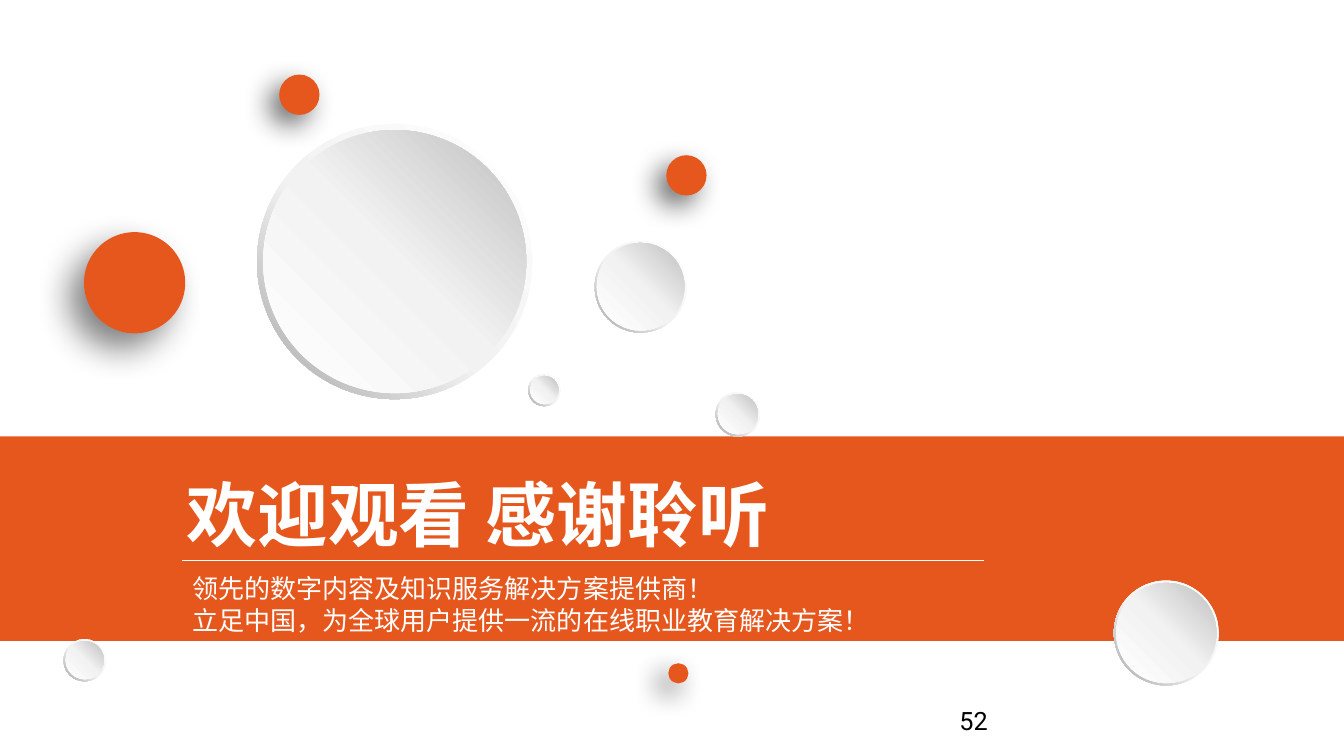
from copy import deepcopy
from dataclasses import dataclass

from lxml.etree import SubElement as Sub
from pptx import Presentation
from pptx.dml.color import RGBColor as RGB
from pptx.enum.shapes import MSO_CONNECTOR as Conn, MSO_SHAPE as Kind
from pptx.enum.text import MSO_ANCHOR as Anchor, MSO_AUTO_SIZE as Fit, PP_ALIGN as Align
from pptx.oxml.ns import qn
from pptx.util import Inches, Pt

ORANGE = RGB(0xE6, 0x57, 0x1E)
WHITE = RGB(0xFF, 0xFF, 0xFF)
BLACK = RGB(0, 0, 0)
PALE = RGB(0xF2, 0xF2, 0xF2)
SILVER = RGB(0xBF, 0xBF, 0xBF)
GREY = RGB(0xA6, 0xA6, 0xA6)
HAN = "Noto Sans CJK SC"
LATIN = "Roboto"

# The slide is a grid of square cells, ten to the inch
COLS, ROWS = 133.33, 75


def cell(n: float) -> int:
    return Inches(n / 10)


@dataclass
class Area:
    col: float
    row: float
    wide: float
    high: float

    def box(self) -> list[int]:
        return [cell(n) for n in (self.col, self.row, self.wide, self.high)]


@dataclass
class Dot:
    col: float
    row: float
    size: float
    alpha: int = 60
    blur: int = 20
    dist: int = 10
    edge: bool = False


@dataclass
class Disc:
    col: float
    row: float
    size: float


@dataclass
class Style:
    size: float
    font: str = HAN
    color: RGB = WHITE
    bold: bool = False
    pitch: float | None = None


DOTS = [
    Dot(8.4, 23.1, 9.9, alpha=50, blur=25, dist=15, edge=True),
    Dot(27.7, 7.4, 4),
    Dot(66.1, 15.4, 4),
    Dot(66.3, 65.8, 2),
]
DISCS = [
    Disc(25.5, 12.3, 27.3),
    Disc(71, 38.9, 4.4),
    Disc(59, 23.9, 9.1),
    Disc(52.4, 37.1, 3.2),
    Disc(6.3, 63.4, 4.2),
    Disc(110.5, 57.6, 10.4),
]


def add_plain(shapes, kind: Kind, area: Area):
    shape = shapes.add_shape(kind, *area.box())
    shape.shadow.inherit = False
    shape.line.fill.background()
    return shape


def shade(shape, angle: int, mid: int, dark: RGB) -> None:
    """Blend from white through pale grey to the dark colour."""
    fill = shape.fill
    fill.gradient()
    fill.gradient_angle = angle
    first = shape._element.spPr.find(".//" + qn("a:gs"))
    first.addnext(deepcopy(first))
    tones = ((0, WHITE), (mid / 100, PALE), (1, dark))
    for stop, (place, tone) in zip(fill.gradient_stops, tones):
        stop.position = place
        stop.color.rgb = tone


def add_dot(shapes, dot: Dot) -> None:
    shape = add_plain(shapes, Kind.OVAL, Area(dot.col, dot.row, dot.size, dot.size))
    shape.fill.solid()
    shape.fill.fore_color.rgb = ORANGE
    if dot.edge:
        shape.line.color.rgb = ORANGE
        shape.line.width = Pt(1)
    # Soft shadow to the lower left
    glow = Sub(shape._element.spPr.find(qn("a:effectLst")), qn("a:outerShdw"),
               blurRad=str(Pt(dot.blur)), dist=str(Pt(dot.dist)),
               dir=str(135 * 60000), algn="tr", rotWithShape="0")
    tint = Sub(glow, qn("a:srgbClr"), val=str(BLACK))
    Sub(tint, qn("a:alpha"), val=str(dot.alpha * 1000))


def add_disc(shapes, disc: Disc) -> None:
    group = shapes.add_group_shape().shapes
    ring = add_plain(group, Kind.DONUT, Area(disc.col, disc.row, disc.size, disc.size))
    ring.adjustments[0] = 0.049
    shade(ring, 225, 55, GREY)
    rim = max(0.2, disc.size * 0.022)
    side = disc.size - 2 * rim
    face = add_plain(group, Kind.OVAL, Area(disc.col + rim, disc.row + rim, side, side))
    shade(face, 45, 51, SILVER)


def put_text(shape, area: Area, lines: list[str], style: Style, anchor: Anchor) -> None:
    shape.left, shape.top, shape.width, shape.height = area.box()
    frame = shape.text_frame
    frame.word_wrap = True
    frame.auto_size = Fit.NONE
    frame.vertical_anchor = anchor
    for i, line in enumerate(lines):
        para = frame.add_paragraph() if i else frame.paragraphs[0]
        para.alignment = Align.LEFT
        para.space_before = Pt(0)
        if style.pitch:
            para.line_spacing = Pt(style.pitch)
        run = para.add_run()
        run.text = line
        font = run.font
        font.size = Pt(style.size)
        font.bold = style.bold
        font.color.rgb = style.color
        font.name = style.font
        Sub(run._r.get_or_add_rPr(), qn("a:ea"), typeface=style.font)


def main() -> None:
    deck = Presentation()
    deck.slide_width, deck.slide_height = cell(COLS), cell(ROWS)
    slide = deck.slides.add_slide(deck.slide_layouts[0])
    shapes = slide.shapes
    title, body = slide.placeholders

    # Orange band
    band = add_plain(shapes, Kind.RECTANGLE, Area(0, 43.3, COLS, 20.3))
    band.fill.solid()
    band.fill.fore_color.rgb = ORANGE

    # Floating circles
    for disc in DISCS:
        add_disc(shapes, disc)
    for dot in DOTS:
        add_dot(shapes, dot)

    # Title and motto, in front of the band
    for holder in (title, body):
        shapes._spTree.append(holder._element)
    put_text(title, Area(17.5, 46.2, 96.4, 9.5), ["欢迎观看 感谢聆听"],
             Style(50.6, bold=True), Anchor.MIDDLE)
    put_text(body, Area(18.1, 56.3, 70.6, 7.3),
             ["领先的数字内容及知识服务解决方案提供商！",
              "立足中国，为全球用户提供一流的在线职业教育解决方案！"],
             Style(18.6, pitch=22.4), Anchor.TOP)

    # Rule between them
    rule = shapes.add_connector(Conn.STRAIGHT, cell(18.1), cell(55.6), cell(97.6), cell(55.6))
    rule.line.color.rgb = WHITE
    rule.line.width = Pt(0.5)
    Sub(rule._element.spPr, qn("a:effectLst"))

    # Page number
    spot = Area(94.2, 69.5, 30, 4)
    put_text(shapes.add_textbox(*spot.box()), spot, ["52"],
             Style(18, LATIN, BLACK), Anchor.MIDDLE)

    deck.save("out.pptx")


if __name__ == "__main__":
    main()
